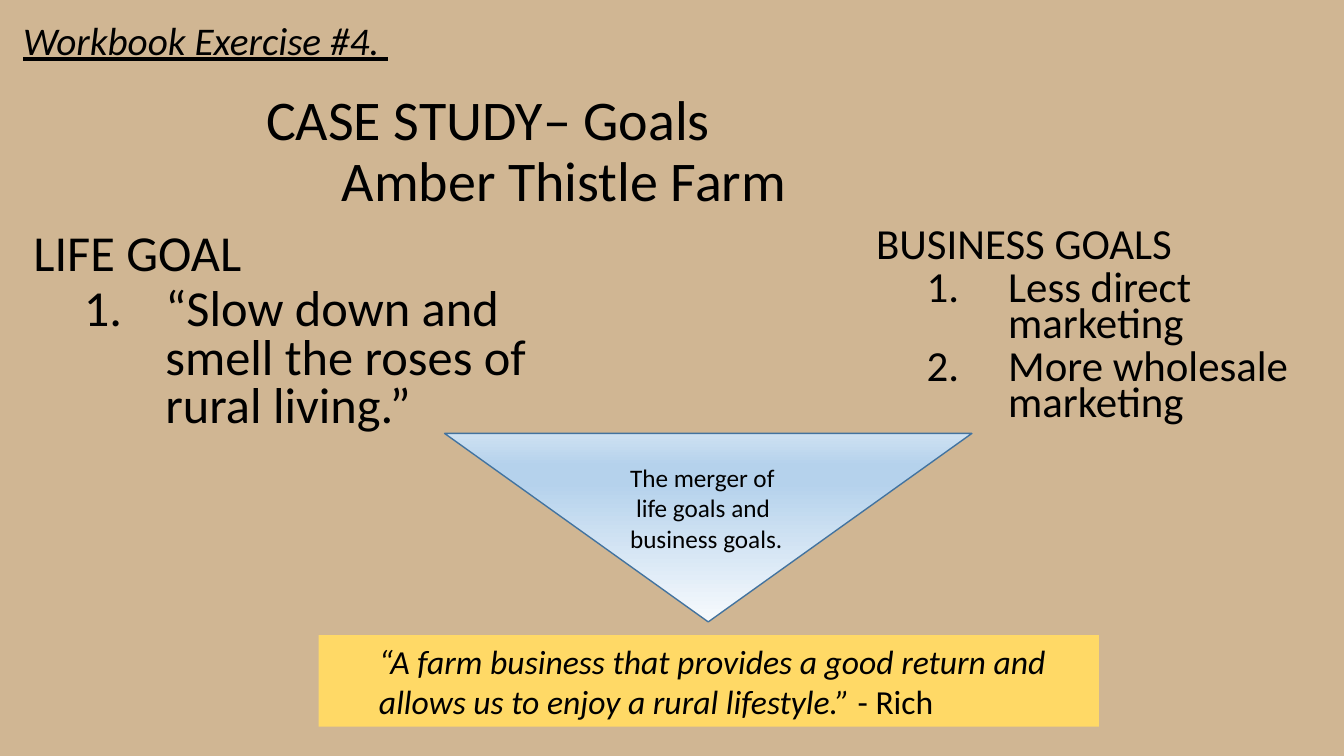
from dataclasses import dataclass

from lxml import etree
from pptx import Presentation
from pptx import util as u
from pptx.dml.color import RGBColor
from pptx.enum import shapes, text
from pptx.oxml.ns import qn

SAND = RGBColor(0xD0, 0xB6, 0x93)
GOLD = RGBColor(0xFF, 0xD9, 0x66)
BLACK = RGBColor(0, 0, 0)
EDGE = RGBColor(0x43, 0x73, 0x9E)
PALE = RGBColor(0xF7, 0xFA, 0xFD)
SKY = RGBColor(0xB5, 0xD2, 0xEC)
MIST = RGBColor(0xCE, 0xE1, 0xF2)
FADE = [(0, PALE), (74, SKY), (83, SKY), (100, MIST)]

FACE = "Calibri"
WIDE, HIGH = u.Inches(13.33), u.Inches(7.5)


@dataclass
class Box:
    """A place on the slide, in percent of its width and height."""
    left: float
    top: float
    width: float
    height: float

    def span(self) -> tuple[int, int, int, int]:
        return (int(WIDE * self.left / 100), int(HIGH * self.top / 100),
                int(WIDE * self.width / 100), int(HIGH * self.height / 100))


@dataclass
class Line:
    """One paragraph; left and hang are inches, size and before are points."""
    words: str
    size: float
    left: float = 0
    hang: float = 0
    space: float = 1
    before: float = 0
    level: int = 0
    mark: str = "buNone"
    slant: bool = False
    under: bool = False


@dataclass
class Goals:
    box: Box
    head: str
    items: list[str]
    size: float
    space: float

    def lines(self) -> list[Line]:
        head = Line(self.head, self.size, space=self.space, before=10)
        return [head] + [
            Line(item, self.size, 1.31, -0.81, self.space, 5, 1, "buAutoNum")
            for item in self.items]


TITLE = Box(19.05, 10.53, 54.09, 19.33)
LABEL = Box(0.98, 1.47, 31.28, 7.6)
QUOTE = Box(23.71, 84, 58.06, 12.13)
FUNNEL = Box(33.08, 57.33, 39.23, 24.93)
MERGER = Box(46.14, 60.53, 13.73, 13.47)
GOALS = [
    Goals(Box(1.73, 30.13, 39.01, 28), "LIFE GOAL",
          ["“Slow down and smell the roses of rural living.”"], 36, 0.8),
    Goals(Box(64.44, 29.87, 34.58, 28.67), "BUSINESS GOALS",
          ["Less direct marketing", "More wholesale marketing"], 30.6, 0.7),
]


def place(shape, box: Box) -> None:
    shape.left, shape.top, shape.width, shape.height = box.span()


def write(shape, lines: list[Line], fit=text.MSO_AUTO_SIZE.NONE) -> None:
    frame = shape.text_frame
    frame.word_wrap = True
    frame.auto_size = fit
    for i, line in enumerate(lines):
        para = frame.add_paragraph() if i else frame.paragraphs[0]
        para.add_run().text = line.words
        para.level = line.level
        para.alignment = text.PP_ALIGN.LEFT
        para.line_spacing = line.space
        para.space_before = u.Pt(line.before)
        props = para._p.get_or_add_pPr()
        props.set("marL", str(u.Inches(line.left)))
        props.set("indent", str(u.Inches(line.hang)))
        mark = etree.SubElement(props, qn(f"a:{line.mark}"))
        if line.mark == "buAutoNum":
            mark.set("type", "arabicPeriod")
        font = para.font
        font.name, font.size = FACE, u.Pt(line.size)
        font.italic, font.underline = line.slant, line.under
        font.color.rgb = BLACK


def note(slide, box: Box, lines: list[Line]) -> None:
    write(slide.shapes.add_textbox(*box.span()), lines,
          text.MSO_AUTO_SIZE.SHAPE_TO_FIT_TEXT)


def shade(shape, stops: list[tuple[int, RGBColor]]) -> None:
    """Fill with a vertical gradient of any number of stops."""
    shape.fill.gradient()
    shape.fill.gradient_angle = 270
    ramp = shape._element.spPr.find(qn("a:gradFill")).find(qn("a:gsLst"))
    for old in list(ramp):
        ramp.remove(old)
    for share, tint in stops:
        stop = etree.SubElement(ramp, qn("a:gs"), pos=str(share * 1000))
        etree.SubElement(stop, qn("a:srgbClr"), val=str(tint))


def banner(slide) -> None:
    bar = slide.shapes.add_shape(shapes.MSO_SHAPE.RECTANGLE, *QUOTE.span())
    bar.shadow.inherit = False
    bar.fill.solid()
    bar.fill.fore_color.rgb = GOLD
    bar.line.fill.background()
    quote = ("“A farm business that provides a good return and "
             "allows us to enjoy a rural lifestyle.” ")
    write(bar, [Line(quote, 24, left=0.5, level=1, slant=True)],
          text.MSO_AUTO_SIZE.SHAPE_TO_FIT_TEXT)
    name = bar.text_frame.paragraphs[0].add_run()
    name.text = "- Rich"
    name.font.italic = False


def funnel(slide) -> None:
    shape = slide.shapes.add_shape(
        shapes.MSO_SHAPE.ISOSCELES_TRIANGLE, *FUNNEL.span())
    shape.rotation = 180
    shape.shadow.inherit = False
    shade(shape, FADE)
    shape.line.color.rgb = EDGE
    shape.line.width = u.Pt(1)


def main() -> None:
    deck = Presentation()
    deck.slide_width, deck.slide_height = WIDE, HIGH
    slide = deck.slides.add_slide(deck.slide_layouts.get_by_name("Two Content"))
    slide.background.fill.solid()
    slide.background.fill.fore_color.rgb = SAND

    title = slide.shapes.title
    place(title, TITLE)
    title.text_frame.vertical_anchor = text.MSO_ANCHOR.MIDDLE
    write(title, [Line("CASE STUDY– Goals", 40, space=0.9),
                  Line("Amber Thistle Farm", 40, left=0.75, space=0.9)])
    for goals, body in zip(GOALS, list(slide.placeholders)[1:]):
        place(body, goals.box)
        write(body, goals.lines())

    banner(slide)
    note(slide, LABEL,
         [Line("Workbook Exercise #4. ", 28, slant=True, under=True)])
    funnel(slide)
    note(slide, MERGER, [Line("The merger of", 18),
                         Line("life goals and", 18, left=0.06),
                         Line("business goals.", 18)])
    deck.save("out.pptx")


if __name__ == "__main__":
    main()
